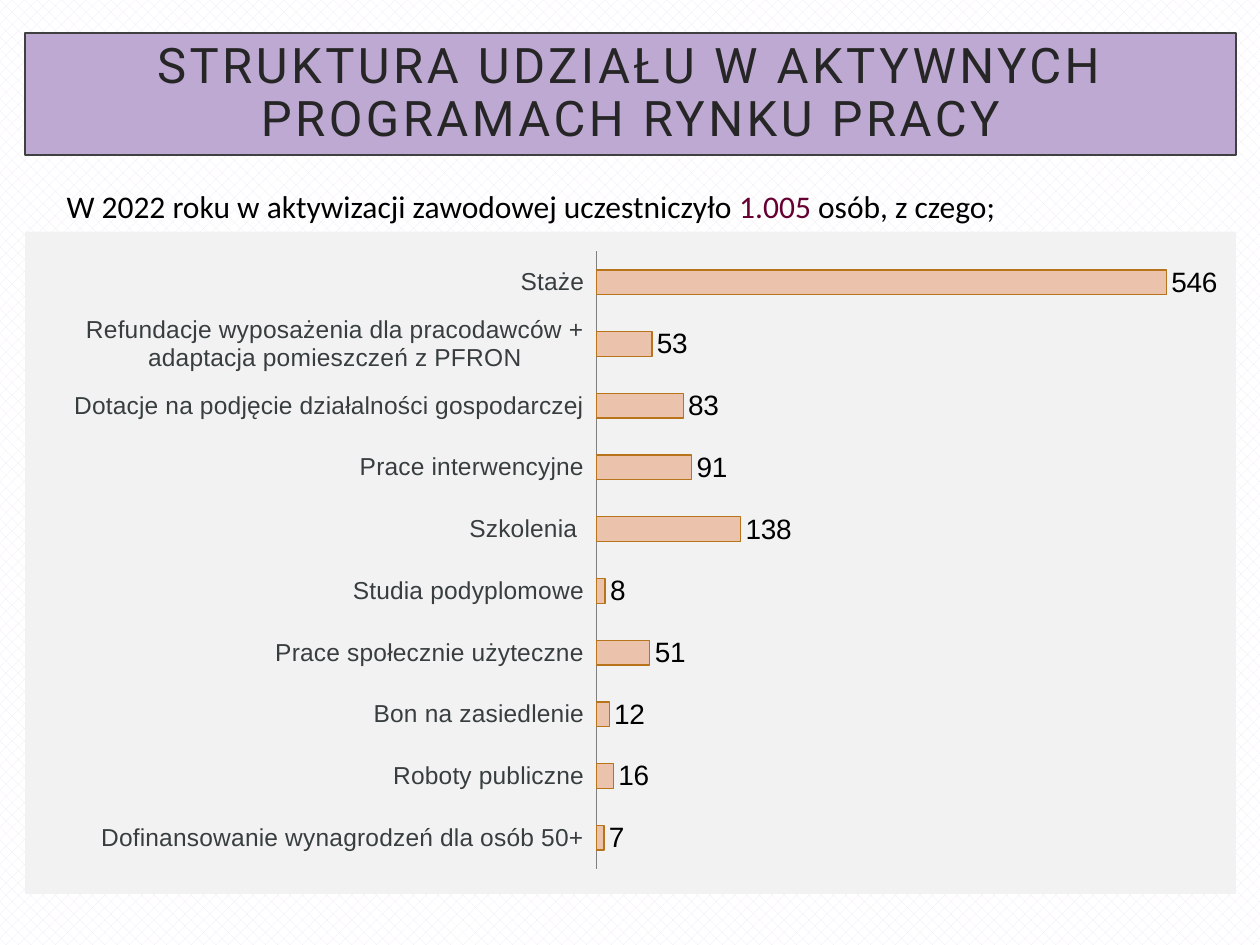
"""Build the slide on participation in active labour market programmes."""
from lxml.etree import SubElement
from pptx import Presentation
from pptx.chart.data import CategoryChartData
from pptx.dml.color import RGBColor
from pptx.enum.chart import XL_CHART_TYPE as ChartType, XL_LABEL_POSITION as LabelPosition
from pptx.enum.chart import XL_TICK_LABEL_POSITION as TickLabels, XL_TICK_MARK as TickMark
from pptx.enum.dml import MSO_PATTERN as Pattern
from pptx.enum.shapes import MSO_SHAPE as Shape
from pptx.enum.text import MSO_ANCHOR as Anchor, MSO_AUTO_SIZE as AutoSize, PP_ALIGN as Align
from pptx.oxml import parse_xml
from pptx.oxml.ns import nsdecls, qn
from pptx.util import Inches, Pt

WIDTH, HEIGHT = Inches(10), Inches(7.5)
MARGIN, BAND = 0.02, 0.961
COLORS = {
    "weave": "EEE9F3", "paper": "FFFFFF", "banner": "BEA9D3", "border": "404040",
    "title": "262626", "text": "000000", "accent": "660033", "panel": "F2F2F2",
    "bar": "EBC2AB", "bar_edge": "B8741A", "category": "383E40", "axis": "808080",
}
PROGRAMMES = {
    "Dofinansowanie wynagrodzeń dla osób 50+": 7,
    "Roboty publiczne": 16,
    "Bon na zasiedlenie": 12,
    "Prace społecznie użyteczne": 51,
    "Studia podyplomowe": 8,
    "Szkolenia ": 138,
    "Prace interwencyjne": 91,
    "Dotacje na podjęcie działalności gospodarczej": 83,
    "Refundacje wyposażenia dla pracodawców + adaptacja pomieszczeń z PFRON": 53,
    "Staże": 546,
}
INTRO = [
    ("W 2022 roku w aktywizacji zawodowej uczestniczyło ", "text"),
    ("1.005 ", "accent"),
    ("osób, z czego;", "text"),
]
PLOT_SHARES = {"x": 0.472, "y": 0.03, "w": 0.517, "h": 0.932}


def color(name):
    """Return the named colour."""
    return RGBColor.from_string(COLORS[name])


def area(left, top, width, height):
    """Turn shares of the slide into a position and size."""
    return int(left * WIDTH), int(top * HEIGHT), int(width * WIDTH), int(height * HEIGHT)


def style_font(font, face, size, tint):
    """Set face, size and colour of a font."""
    font.name, font.size, font.bold = face, Pt(size), False
    font.color.rgb = color(tint)


def paint_background(slide):
    """Cover the slide with a pale dotted weave."""
    fill = slide.background.fill
    fill.patterned()
    fill.pattern = Pattern.PERCENT_30
    fill.fore_color.rgb, fill.back_color.rgb = color("weave"), color("paper")


def add_title(slide, wording):
    """Add the framed title banner."""
    banner = slide.shapes.add_shape(Shape.RECTANGLE, *area(MARGIN, 0.035, BAND, 0.129))
    banner.shadow.inherit = False
    banner.fill.solid()
    banner.fill.fore_color.rgb = color("banner")
    banner.line.color.rgb = color("border")
    banner.line.width = Pt(1)
    frame = banner.text_frame
    frame.word_wrap = True
    frame.vertical_anchor = Anchor.MIDDLE
    frame.margin_left = frame.margin_right = frame.margin_top = frame.margin_bottom = Inches(0.2)
    frame.text = wording
    heading = frame.paragraphs[0]
    heading.alignment, heading.line_spacing = Align.CENTER, 0.9
    run = heading.runs[0]
    style_font(run.font, "Roboto", 28, "title")
    run.font._element.set("spc", "200")


def add_intro(slide, pieces):
    """Add the sentence with the highlighted total."""
    frame = slide.shapes.add_textbox(*area(0.043, 0.191, 0.921, 0.053)).text_frame
    frame.word_wrap = True
    frame.auto_size = AutoSize.SHAPE_TO_FIT_TEXT
    for wording, tint in pieces:
        run = frame.paragraphs[0].add_run()
        run.text = wording
        style_font(run.font, "Calibri", 18, tint)


def panel_fill():
    """Return chart shape properties with the panel fill and no line."""
    return parse_xml(
        f'<c:spPr {nsdecls("c", "a")}><a:solidFill><a:srgbClr val="{COLORS["panel"]}"/>'
        "</a:solidFill><a:ln><a:noFill/></a:ln></c:spPr>"
    )


def place_plot(chart, shares):
    """Fix the inner plot area and fill it together with the chart panel."""
    body = chart._chartSpace.find(qn("c:chart"))
    plot_area = body.find(qn("c:plotArea"))
    for old in plot_area.findall(qn("c:layout")):
        plot_area.remove(old)
    layout = parse_xml(f'<c:layout {nsdecls("c")}/>')
    manual = SubElement(layout, qn("c:manualLayout"))
    settings = {"layoutTarget": "inner", "xMode": "edge", "yMode": "edge", **shares}
    for tag, value in settings.items():
        SubElement(manual, qn(f"c:{tag}")).set("val", str(value))
    plot_area.insert(0, layout)
    plot_area.append(panel_fill())
    body.addnext(panel_fill())


def style_axes(chart):
    """Show plain category names and hide the value axis."""
    categories, values = chart.category_axis, chart.value_axis
    categories.major_tick_mark = categories.minor_tick_mark = TickMark.NONE
    categories.tick_label_position = TickLabels.LOW
    categories.format.line.color.rgb = color("axis")
    style_font(categories.tick_labels.font, "Arial", 14, "category")
    values.minimum_scale, values.maximum_scale = 0, 600
    values.has_major_gridlines = False
    values.visible = False


def style_bars(plot):
    """Set bar spacing, colours and value labels."""
    plot.gap_width, plot.overlap, plot.vary_by_categories = 150, -25, False
    bars = plot.series[0].format
    bars.fill.solid()
    bars.fill.fore_color.rgb = color("bar")
    bars.line.color.rgb = color("bar_edge")
    bars.line.width = Pt(0.75)
    labels = plot.series[0].data_labels
    labels.show_value = True
    labels.position = LabelPosition.OUTSIDE_END
    style_font(labels.font, "Arial", 16, "text")


def add_programme_chart(slide, programmes):
    """Add the bar chart of participants per programme."""
    data = CategoryChartData()
    data.categories = list(programmes)
    data.add_series("Series 1", list(programmes.values()))
    place = area(MARGIN, 0.245, BAND, 0.701)
    chart = slide.shapes.add_chart(ChartType.BAR_CLUSTERED, *place, data).chart
    chart.has_legend = chart.has_title = False
    style_font(chart.font, "Calibri", 18, "text")
    style_axes(chart)
    style_bars(chart.plots[0])
    place_plot(chart, PLOT_SHARES)


def main():
    """Build and save the slide."""
    deck = Presentation()
    deck.slide_width, deck.slide_height = WIDTH, HEIGHT
    slide = deck.slides.add_slide(deck.slide_layouts[6])
    paint_background(slide)
    add_title(slide, "STRUKTURA UDZIAŁU W AKTYWNYCH PROGRAMACH RYNKU PRACY")
    add_programme_chart(slide, PROGRAMMES)
    add_intro(slide, INTRO)
    deck.save("out.pptx")


if __name__ == "__main__":
    main()
